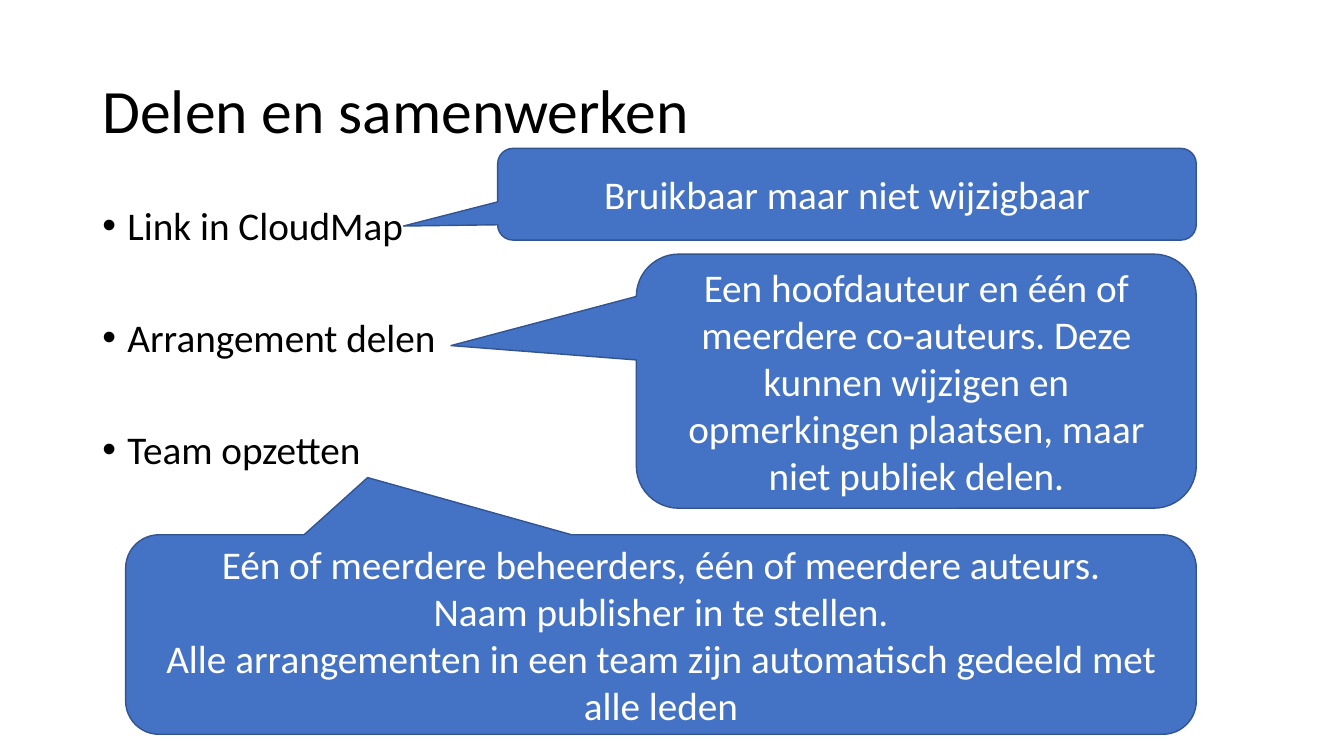
import pptx
import pptx.dml.color
import pptx.enum.shapes
import pptx.enum.text
import pptx.oxml
import pptx.oxml.ns
import pptx.util

Pt = pptx.util.Pt
RGBColor = pptx.dml.color.RGBColor
ALIGN = pptx.enum.text.PP_ALIGN
ANCHOR = pptx.enum.text.MSO_ANCHOR

BLACK = RGBColor(0x00, 0x00, 0x00)
WHITE = RGBColor(0xFF, 0xFF, 0xFF)
BLUE = RGBColor(0x44, 0x72, 0xC4)
DARK_BLUE = RGBColor(0x32, 0x54, 0x91)

# Content
TITLE = "Delen en samenwerken"
TOPICS = ["Link in CloudMap", "Arrangement delen", "Team opzetten"]
# Each callout: left, top, width, height, pointer (x, y), paragraphs
CALLOUTS = [
    (355.5, 106, 499, 65.5, (-0.635, 0.347), ["Bruikbaar maar niet wijzigbaar"]),
    (454.5, 181.5, 400, 181.5, (-0.831, -0.14), [
        "Een hoofdauteur en één of meerdere co-auteurs. Deze kunnen wijzigen "
        "en opmerkingen plaatsen, maar niet publiek delen."]),
    (89.75, 382, 764.75, 142.5, (-0.274, -0.787), [
        "Eén of meerdere beheerders, één of meerdere auteurs.",
        "Naam publisher in te stellen.",
        "Alle arrangementen in een team zijn automatisch gedeeld met alle leden"]),
]
MARGIN, CONTENT_WIDTH = 66, 828
BULLET_INDENT = 18
TOPIC_GAP = 49.6
CORNER = 0.167


def add_bullet(paragraph):
    properties = paragraph._p.get_or_add_pPr()
    properties.set("marL", str(Pt(BULLET_INDENT)))
    properties.set("indent", str(-Pt(BULLET_INDENT)))
    namespace = pptx.oxml.ns.nsdecls("a")
    properties.append(pptx.oxml.parse_xml(f'<a:buFont {namespace} typeface="Arial"/>'))
    properties.append(pptx.oxml.parse_xml(f'<a:buChar {namespace} char="•"/>'))


def write_text(shape, lines, size=28, color=BLACK, align=ALIGN.LEFT,
               anchor=ANCHOR.TOP, spacing=1.0, gap=0, bullet=False):
    frame = shape.text_frame
    frame.word_wrap = True
    frame.auto_size = pptx.enum.text.MSO_AUTO_SIZE.NONE
    frame.vertical_anchor = anchor
    for index, line in enumerate(lines):
        paragraph = frame.add_paragraph() if index else frame.paragraphs[0]
        paragraph.text = line
        if bullet:
            add_bullet(paragraph)
        paragraph.alignment = align
        paragraph.line_spacing = spacing
        paragraph.space_before = Pt(gap if index else 0)
        paragraph.font.name = "Calibri"
        paragraph.font.size = Pt(size)
        paragraph.font.color.rgb = color


presentation = pptx.Presentation()
presentation.slide_width, presentation.slide_height = Pt(960), Pt(540)
slide = presentation.slides.add_slide(presentation.slide_layouts[5])

# Title
title = slide.shapes.title
title.left, title.top = Pt(MARGIN), Pt(28.75)
title.width, title.height = Pt(CONTENT_WIDTH), Pt(104.5)
write_text(title, [TITLE], size=44, anchor=ANCHOR.MIDDLE, spacing=0.9)

# Topics
topics = slide.shapes.add_textbox(Pt(MARGIN), Pt(144), Pt(CONTENT_WIDTH), Pt(342.75))
write_text(topics, TOPICS, spacing=0.9, gap=TOPIC_GAP, bullet=True)

# Callouts pointing at the topics
for left, top, width, height, pointer, lines in CALLOUTS:
    callout = slide.shapes.add_shape(
        pptx.enum.shapes.MSO_SHAPE.ROUNDED_RECTANGULAR_CALLOUT,
        Pt(left), Pt(top), Pt(width), Pt(height))
    for index, value in enumerate((*pointer, CORNER)):
        callout.adjustments[index] = value
    callout.shadow.inherit = False
    callout.fill.solid()
    callout.fill.fore_color.rgb = BLUE
    callout.line.color.rgb = DARK_BLUE
    callout.line.width = Pt(1)
    write_text(callout, lines, color=WHITE, align=ALIGN.CENTER, anchor=ANCHOR.MIDDLE)

presentation.save("out.pptx")
